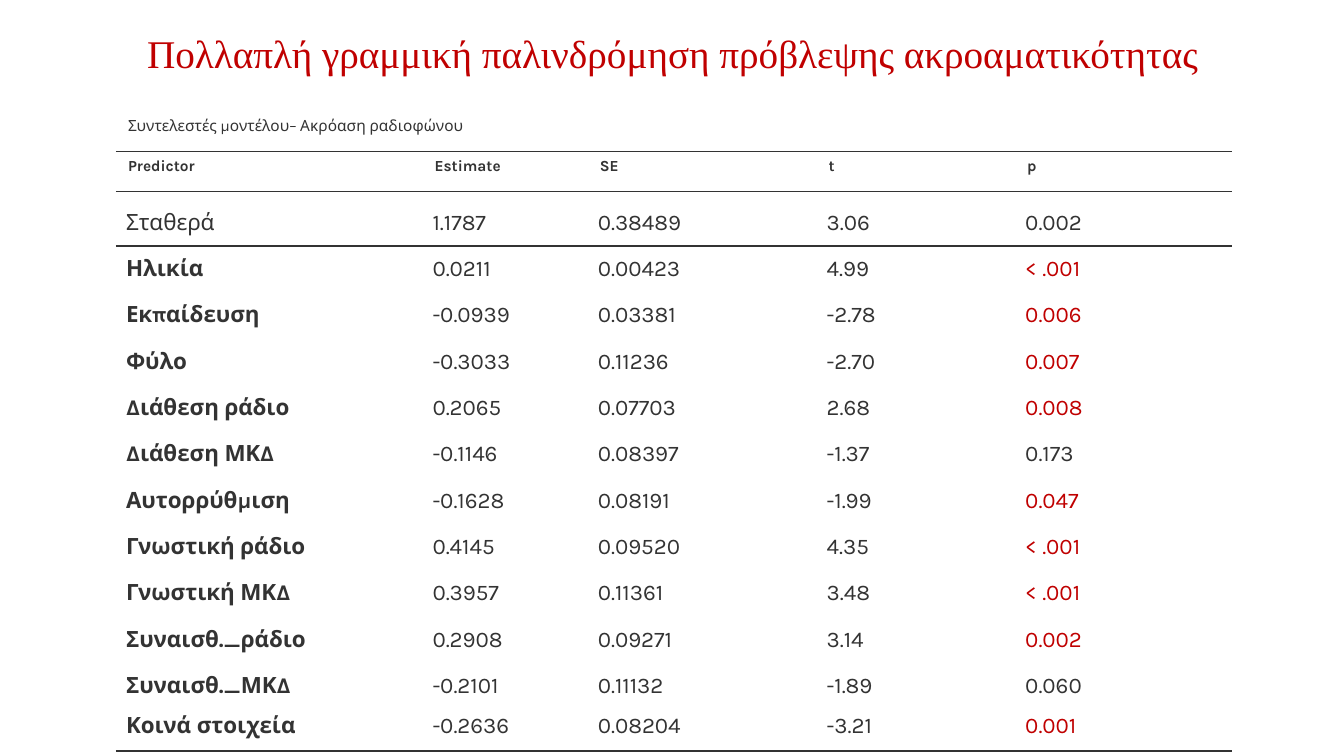
from lxml.etree import SubElement
from pptx import Presentation
from pptx.dml.color import RGBColor
from pptx.enum.text import MSO_ANCHOR, PP_ALIGN
from pptx.oxml.ns import qn
from pptx.util import Emu, Pt

PX = 9144  # 100 px to the inch
RED = RGBColor(0xC0, 0x00, 0x00)
DARK = RGBColor(0x33, 0x33, 0x33)
NO_GRID = "{2D5ABB26-0587-4C30-8999-92F81FD0307C}"

CAPTION = "Συντελεστές μοντέλου– Ακρόαση ραδιοφώνου"
HEADERS = ["Predictor", "Estimate", "SE", "t", "p"]
CONSTANT = "Σταθερά"
COEFFICIENTS = [
    (CONSTANT, "1.1787", "0.38489", "3.06", "0.002"),
    ("Ηλικία", "0.0211", "0.00423", "4.99", "< .001"),
    ("Εκπαίδευση", "-0.0939", "0.03381", "-2.78", "0.006"),
    ("Φύλο", "-0.3033", "0.11236", "-2.70", "0.007"),
    ("Διάθεση ράδιο", "0.2065", "0.07703", "2.68", "0.008"),
    ("Διάθεση ΜΚΔ", "-0.1146", "0.08397", "-1.37", "0.173"),
    ("Αυτορρύθμιση", "-0.1628", "0.08191", "-1.99", "0.047"),
    ("Γνωστική ράδιο", "0.4145", "0.09520", "4.35", "< .001"),
    ("Γνωστική ΜΚΔ", "0.3957", "0.11361", "3.48", "< .001"),
    ("Συναισθ._ράδιο", "0.2908", "0.09271", "3.14", "0.002"),
    ("Συναισθ._ΜΚΔ", "-0.2101", "0.11132", "-1.89", "0.060"),
    ("Κοινά στοιχεία", "-0.2636", "0.08204", "-3.21", "0.001"),
]
COLUMNS = [201, 103, 140, 19, 124, 103, 94, 103, 106, 109]
ROWS = [40, 40, 54] + [46] * 10 + [41, 68]
LAST = len(COEFFICIENTS) + 1
RULES = {0: 1, 1: 1, LAST: 1.5}  # row -> width in points of the rule below it


class Deck:
    def __init__(self, width, height):
        self.prs = Presentation()
        self.prs.slide_width, self.prs.slide_height = Emu(width * PX), Emu(height * PX)
        self.slide = self.prs.slides.add_slide(self.prs.slide_layouts[6])

    def style(self, p, size, color, font="Karla", bold=False):
        p.font.size, p.font.name, p.font.bold = Pt(size), font, bold
        p.font.color.rgb = color

    def title(self, text, *box):
        tf = self.slide.shapes.add_textbox(*(Emu(v * PX) for v in box)).text_frame
        tf.word_wrap = True
        tf.vertical_anchor = MSO_ANCHOR.MIDDLE
        p = tf.paragraphs[0]
        p.text, p.alignment, p.line_spacing = text, PP_ALIGN.CENTER, 0.9
        self.style(p, 28, RED, "Times New Roman")

    def table(self, left, top, columns, rows, rules):
        box = (left, top, sum(columns), sum(rows))
        frame = self.slide.shapes.add_table(
            len(rows), len(columns), *(Emu(v * PX) for v in box))
        table = frame.table
        table.first_row = table.horz_banding = False
        frame._element.find(".//" + qn("a:tableStyleId")).text = NO_GRID
        for column, width in zip(table.columns, columns):
            column.width = Emu(width * PX)
        for i, height in enumerate(rows):
            table.rows[i].height = Emu(height * PX)
            for cell in table.rows[i].cells:
                self.border(cell, "a:lnT", rules.get(i - 1))
                self.border(cell, "a:lnB", rules.get(i))
                cell.fill.background()
        return table

    def border(self, cell, side, width):
        if width:
            ln = SubElement(cell._tc.get_or_add_tcPr(), qn(side), w=str(Pt(width)))
            fill = SubElement(ln, qn("a:solidFill"))
            SubElement(fill, qn("a:srgbClr"), val=str(DARK))

    def cell(self, cell, text, insets, size, color=DARK, bold=False, anchor=MSO_ANCHOR.TOP):
        (cell.margin_left, cell.margin_top,
         cell.margin_right, cell.margin_bottom) = (Emu(v * PX) for v in insets)
        cell.vertical_anchor = anchor
        p = cell.text_frame.paragraphs[0]
        p.text = text
        self.style(p, size, color, bold=bold)


def is_significant(p_value):
    return p_value.startswith("<") or float(p_value) < 0.05


def main():
    deck = Deck(1333, 750)
    deck.title("Πολλαπλή γραμμική παλινδρόμηση πρόβλεψης ακροαματικότητας", 92, 21, 1150, 68)
    table = deck.table(115, 110, COLUMNS, ROWS, RULES)

    # Caption and closing row span the whole table
    for i in (0, len(ROWS) - 1):
        table.cell(i, 0).merge(table.cell(i, len(COLUMNS) - 1))
    deck.cell(table.cell(0, 0), CAPTION, (12, 6, 12, 6), 11)

    # Headings, each over a value column and its spacer
    for j, header in enumerate(HEADERS):
        cell = table.cell(1, 2 * j)
        cell.merge(table.cell(1, 2 * j + 1))
        deck.cell(cell, header, (12, 6, 12, 6), 11, bold=True)

    # Coefficients
    for i, values in enumerate(COEFFICIENTS, start=2):
        predictor = values[0] != CONSTANT
        insets = (10, 10 if i == 2 else 2, 1, 10 if i == LAST else 2)
        for j, value in enumerate(values):
            red = predictor and HEADERS[j] == "p" and is_significant(value)
            deck.cell(table.cell(i, 2 * j), value, insets, 16, RED if red else DARK,
                      bold=predictor and j == 0, anchor=MSO_ANCHOR.MIDDLE)

    deck.prs.save("out.pptx")


if __name__ == "__main__":
    main()
